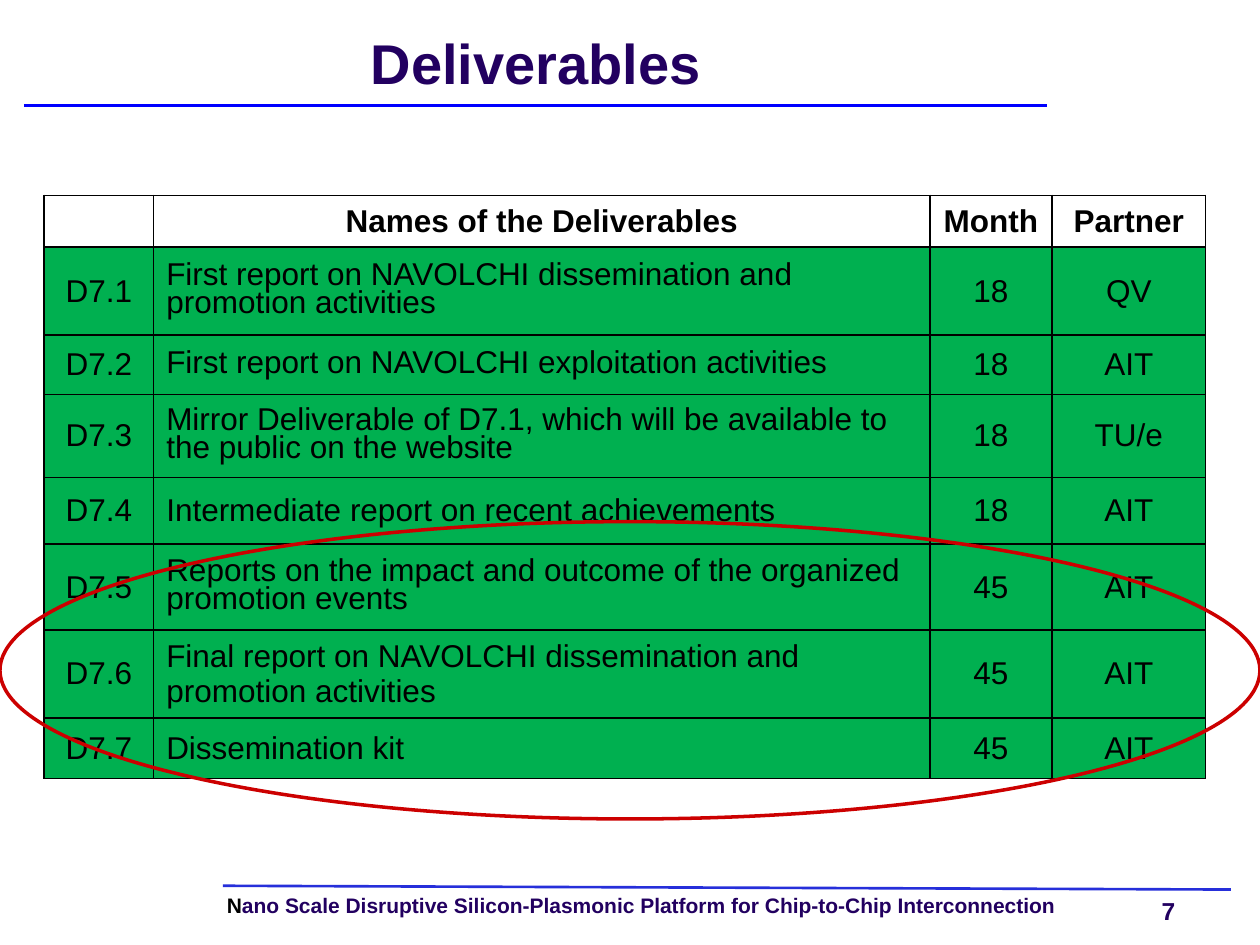
from lxml import etree
from pptx import Presentation
from pptx.dml.color import RGBColor
from pptx.enum.shapes import MSO_CONNECTOR, MSO_SHAPE
from pptx.enum.text import MSO_ANCHOR, MSO_AUTO_SIZE, PP_ALIGN
from pptx.oxml.ns import qn
from pptx.util import Inches, Pt

STRAIGHT = MSO_CONNECTOR.STRAIGHT
OVAL = MSO_SHAPE.OVAL
MIDDLE = MSO_ANCHOR.MIDDLE
NO_AUTOFIT = MSO_AUTO_SIZE.NONE
LEFT, CENTER = PP_ALIGN.LEFT, PP_ALIGN.CENTER

BLACK = RGBColor(0x00, 0x00, 0x00)
NAVY = RGBColor(0x22, 0x00, 0x60)
TITLE_BLUE = RGBColor(0x00, 0x00, 0xFF)
FOOTER_BLUE = RGBColor(0x26, 0x2F, 0xDA)
DONE_GREEN = RGBColor(0x00, 0xB0, 0x50)
HIGHLIGHT_RED = RGBColor(0xCC, 0x00, 0x00)

FONT = "Arial"
COLUMN_WIDTHS = [0.87, 6.16, 0.97, 1.22]
ROW_HEIGHTS = [0.41, 0.7, 0.47, 0.66, 0.53, 0.68, 0.7, 0.48]
HEADER = ["", "Names of the Deliverables", "Month", "Partner"]
DELIVERABLES = [
    ["D7.1", "First report on NAVOLCHI dissemination and promotion activities", "18", "QV"],
    ["D7.2", "First report on NAVOLCHI exploitation activities", "18", "AIT"],
    ["D7.3", "Mirror Deliverable of D7.1, which will be available to "
             "the public on the website", "18", "TU/e"],
    ["D7.4", "Intermediate report on recent achievements", "18", "AIT"],
    ["D7.5", "Reports on the impact and outcome of the organized promotion events", "45", "AIT"],
    ["D7.6", "Final report on NAVOLCHI dissemination and promotion activities", "45", "AIT"],
    ["D7.7", "Dissemination kit", "45", "AIT"],
]
TIGHT_ROWS = {"D7.1", "D7.2", "D7.3", "D7.5"}
NAME_COLUMN = 1


def set_font(font, size, color, bold):
    font.name = FONT
    font.size = Pt(size)
    font.color.rgb = color
    font.bold = bold


def remove_insets(frame):
    frame.margin_left = frame.margin_right = 0
    frame.margin_top = frame.margin_bottom = 0


def add_title(slide, text):
    title = slide.shapes.title
    title.left, title.top = Inches(0.2), Inches(0.2)
    title.width, title.height = Inches(8.11), Inches(0.67)
    frame = title.text_frame
    frame.text = text
    frame.auto_size = NO_AUTOFIT
    frame.vertical_anchor = MIDDLE
    remove_insets(frame)
    paragraph = frame.paragraphs[0]
    paragraph.alignment = CENTER
    paragraph.line_spacing = Pt(32)
    set_font(paragraph.font, 32, NAVY, True)


def add_rule(slide, start, end, color):
    rule = slide.shapes.add_connector(STRAIGHT, *map(Inches, start + end))
    rule.line.color.rgb = color
    rule.line.width = Pt(1.5)
    etree.SubElement(rule._element.spPr, qn("a:effectLst"))


def add_footer_text(slide, position, runs, size, wrap=True):
    """Place one bold line made of (text, color) runs."""
    frame = slide.shapes.add_textbox(*map(Inches, position)).text_frame
    frame.word_wrap = wrap
    remove_insets(frame)
    paragraph = frame.paragraphs[0]
    for text, color in runs:
        run = paragraph.add_run()
        run.text = text
        set_font(run.font, size, color, True)
    return paragraph


def add_cell_borders(cell):
    properties = cell._tc.get_or_add_tcPr()
    for position, side in enumerate(("a:lnL", "a:lnR", "a:lnT", "a:lnB")):
        border = etree.Element(qn(side), w=str(Pt(1)))
        fill = etree.SubElement(border, qn("a:solidFill"))
        etree.SubElement(fill, qn("a:srgbClr"), val=str(BLACK))
        properties.insert(position, border)


def fill_cell(cell, text, is_header, alignment, tight):
    cell.text = text
    cell.vertical_anchor = MIDDLE
    if is_header:
        cell.fill.background()
    else:
        cell.fill.solid()
        cell.fill.fore_color.rgb = DONE_GREEN
    paragraph = cell.text_frame.paragraphs[0]
    paragraph.alignment = alignment
    if tight:
        paragraph.line_spacing = 0.8
    set_font(paragraph.font, 18, BLACK, is_header)
    add_cell_borders(cell)


def add_deliverables_table(slide):
    rows = [HEADER] + DELIVERABLES
    table = slide.shapes.add_table(
        len(rows), len(HEADER), Inches(0.35), Inches(1.55),
        Inches(sum(COLUMN_WIDTHS)), Inches(sum(ROW_HEIGHTS))).table
    table.horz_banding = False
    table.first_row = False
    for column, width in zip(table.columns, COLUMN_WIDTHS):
        column.width = Inches(width)
    for row, height in zip(table.rows, ROW_HEIGHTS):
        row.height = Inches(height)
    for r, values in enumerate(rows):
        for c, text in enumerate(values):
            is_name = r > 0 and c == NAME_COLUMN
            fill_cell(table.cell(r, c), text, r == 0,
                      LEFT if is_name else CENTER,
                      is_name and values[0] in TIGHT_ROWS)


def add_highlight(slide):
    """Ring the deliverables due in month 45."""
    ring = slide.shapes.add_shape(OVAL, 0, Inches(4.14), Inches(10), Inches(2.36))
    ring.shadow.inherit = False
    ring.fill.background()
    ring.line.color.rgb = HIGHLIGHT_RED
    ring.line.width = Pt(2)


def main():
    presentation = Presentation()
    presentation.slide_width, presentation.slide_height = Inches(10), Inches(7.5)
    slide = presentation.slides.add_slide(presentation.slide_layouts.get_by_name("Title Only"))

    project = add_footer_text(
        slide, (1.8, 7.11, 7.14, 0.18),
        [("N", BLACK),
         ("ano Scale Disruptive Silicon-Plasmonic Platform for Chip-to-Chip Interconnection", NAVY)],
        12)
    project.line_spacing = 0.9
    add_footer_text(slide, (9.22, 7.11, 0.24, 0.23), [("7", NAVY)], 14, wrap=False)
    add_rule(slide, (1.77, 7.03), (9.77, 7.06), FOOTER_BLUE)
    add_rule(slide, (0.19, 0.84), (8.31, 0.84), TITLE_BLUE)
    add_title(slide, "Deliverables")
    add_deliverables_table(slide)
    add_highlight(slide)
    presentation.save("out.pptx")


if __name__ == "__main__":
    main()
